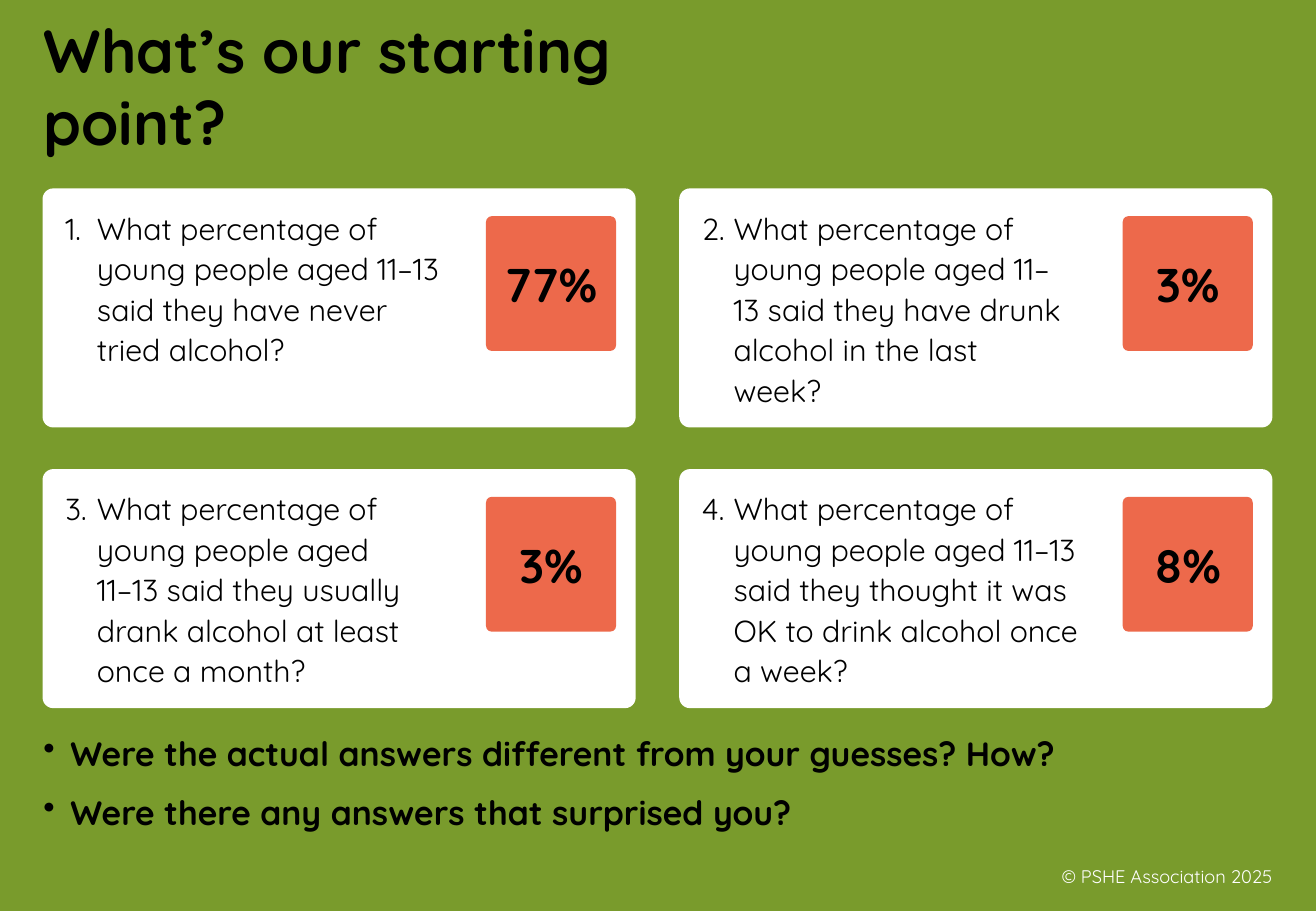
from lxml.etree import SubElement
from pptx import Presentation
from pptx.dml.color import RGBColor
from pptx.enum.shapes import MSO_SHAPE as Preset
from pptx.enum.text import MSO_ANCHOR as Anchor, MSO_AUTO_SIZE as AutoSize, PP_ALIGN as Align
from pptx.oxml.ns import qn
from pptx.util import Cm, Pt

GREEN = RGBColor(0x79, 0x9B, 0x2C)
CORAL = RGBColor(0xED, 0x69, 0x4B)
WHITE = RGBColor(0xFF, 0xFF, 0xFF)
BLACK = RGBColor(0x00, 0x00, 0x00)
FONT = "Quicksand"

# Question, answer, room kept free right of the question (cm)
QUESTIONS = [
    ("What percentage of young people aged 11–13 said they have never tried alcohol?", "77%", 3.91),
    ("What percentage of young people aged 11–13 said they have drunk alcohol in the last week?",
     "3%", 4.32),
    ("What percentage of young people aged \n11–13 said they usually drank alcohol at least "
     "once a month?", "3%", 3.51),
    ("What percentage of young people aged 11–13 said they thought it was OK to drink alcohol "
     "once a week?", "8%", 3.81),
]
DISCUSSION = [
    "Were the actual answers different from your guesses? How?",
    "Were there any answers that surprised you?",
]


def style(paragraph, size, color=BLACK, bold=False, align=Align.LEFT, line=None):
    paragraph.alignment = align
    if line:
        paragraph.line_spacing = Pt(line)
    font = paragraph.font
    font.name, font.size, font.bold = FONT, Pt(size), bold
    font.color.rgb = color


def add_marker(paragraph, indent, tag, **attributes):
    """Give the paragraph a hanging indent and a bullet or number."""
    properties = paragraph._p.get_or_add_pPr()
    properties.set("marL", str(Cm(indent)))
    properties.set("indent", str(-Cm(indent)))
    SubElement(properties, qn(tag), attributes)


def add_panel(slide, left, top, width, height, color):
    panel = slide.shapes.add_shape(Preset.ROUNDED_RECTANGLE, Cm(left), Cm(top), Cm(width), Cm(height))
    panel.adjustments[0] = 0.045
    panel.shadow.inherit = False
    panel.fill.solid()
    panel.fill.fore_color.rgb = color
    panel.line.fill.background()
    panel.text_frame.word_wrap = True
    return panel.text_frame


def add_text_box(slide, left, top, width, height):
    frame = slide.shapes.add_textbox(Cm(left), Cm(top), Cm(width), Cm(height)).text_frame
    frame.word_wrap = True
    return frame


def add_title(slide, left, top, width, height):
    title = slide.shapes.title
    title.left, title.top, title.width, title.height = Cm(left), Cm(top), Cm(width), Cm(height)
    frame = title.text_frame
    frame.text = "What’s our starting point?"
    frame.word_wrap = True
    frame.auto_size = AutoSize.NONE
    frame.vertical_anchor = Anchor.BOTTOM
    paragraph = frame.paragraphs[0]
    paragraph.space_before = Pt(0)
    style(paragraph, 36, bold=True, line=43)


def add_question_card(slide, left, top, width, height, number, question, answer, free_right):
    # White card with the numbered question
    frame = add_panel(slide, left, top, width, height, WHITE)
    frame.vertical_anchor = Anchor.TOP
    frame.margin_left, frame.margin_top = Cm(0.41), Cm(0.3)
    frame.margin_right, frame.margin_bottom = Cm(free_right), Cm(0.13)
    paragraph = frame.paragraphs[0]
    paragraph.text = question
    add_marker(paragraph, 0.66, "a:buAutoNum", type="arabicPeriod", startAt=str(number))
    style(paragraph, 18, line=24)

    # Answer badge
    badge = add_panel(slide, left + 9.27, top + 0.58, 2.72, 2.82, CORAL)
    badge.vertical_anchor = Anchor.MIDDLE
    badge.text = answer
    style(badge.paragraphs[0], 28, bold=True, align=Align.CENTER)


def add_question_grid(slide, left, top, column_step, row_step):
    for index, (question, answer, free_right) in enumerate(QUESTIONS):
        row, column = divmod(index, 2)
        add_question_card(slide, left + column * column_step, top + row * row_step, 12.4, 5,
                          index + 1, question, answer, free_right)


def add_discussion(slide, left, top, width, height):
    frame = add_text_box(slide, left, top, width, height)
    frame.auto_size = AutoSize.SHAPE_TO_FIT_TEXT
    for index, prompt in enumerate(DISCUSSION):
        paragraph = frame.add_paragraph() if index else frame.paragraphs[0]
        paragraph.text = prompt
        add_marker(paragraph, 0.56, "a:buChar", char="•")
        paragraph.space_before = Pt(11 if index else 0)
        style(paragraph, 20, bold=True, line=24)


def add_footer(slide, left, top, width, height):
    frame = add_text_box(slide, left, top, width, height)
    frame.vertical_anchor = Anchor.MIDDLE
    frame.text = "© PSHE Association 2025"
    style(frame.paragraphs[0], 10.8, WHITE, align=Align.RIGHT)


def main():
    presentation = Presentation()
    presentation.slide_width, presentation.slide_height = Cm(27.51), Cm(19.05)
    slide = presentation.slides.add_slide(presentation.slide_layouts[5])
    slide.background.fill.solid()
    slide.background.fill.fore_color.rgb = GREEN

    add_title(slide, 0.66, 1.5, 16.46, 1.93)
    add_question_grid(slide, 0.89, 3.94, column_step=13.31, row_step=5.87)
    add_discussion(slide, 0.66, 15.19, 22.89, 2.36)
    add_footer(slide, 20.65, 17.81, 6.2, 1.02)
    presentation.save("out.pptx")


if __name__ == "__main__":
    main()
